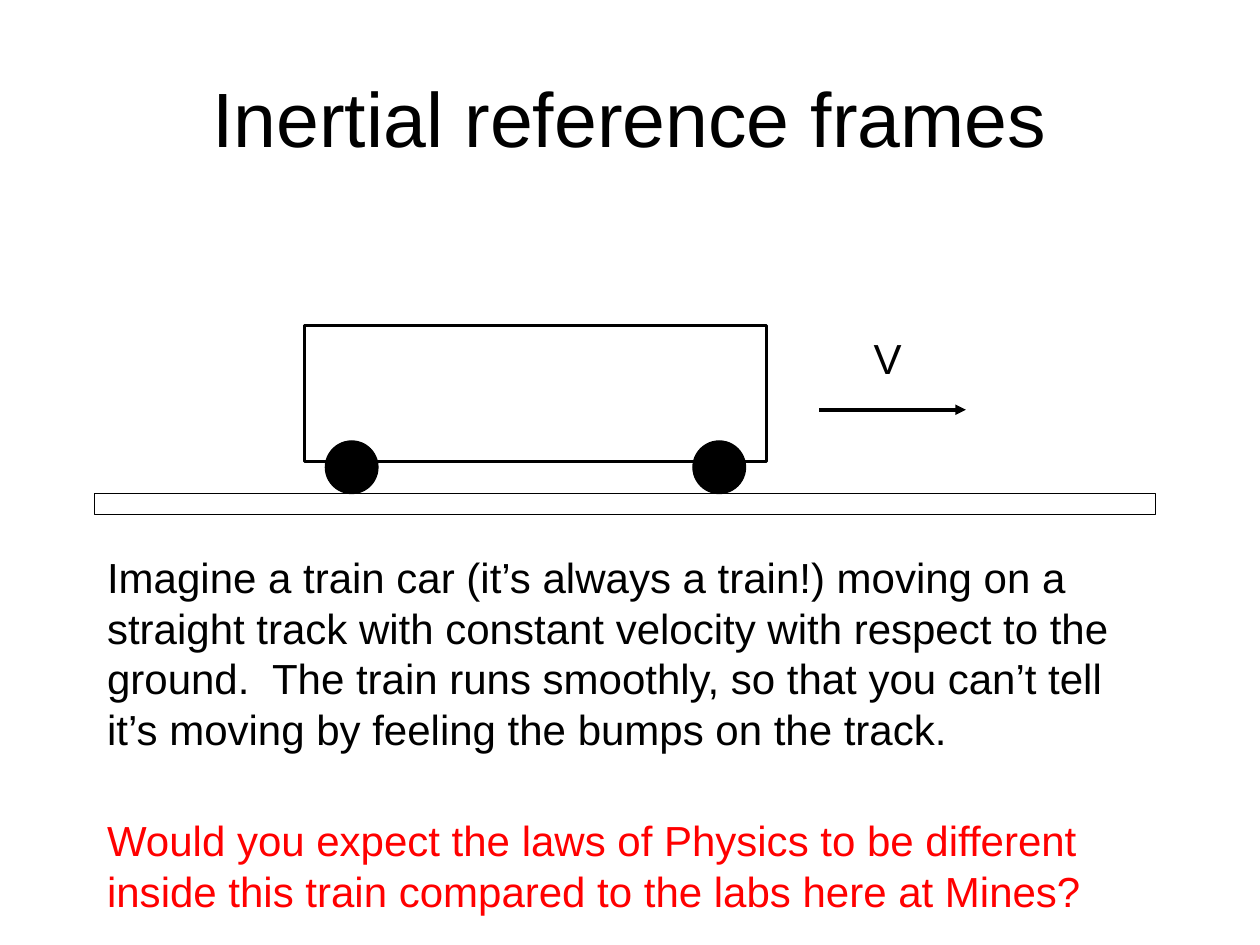
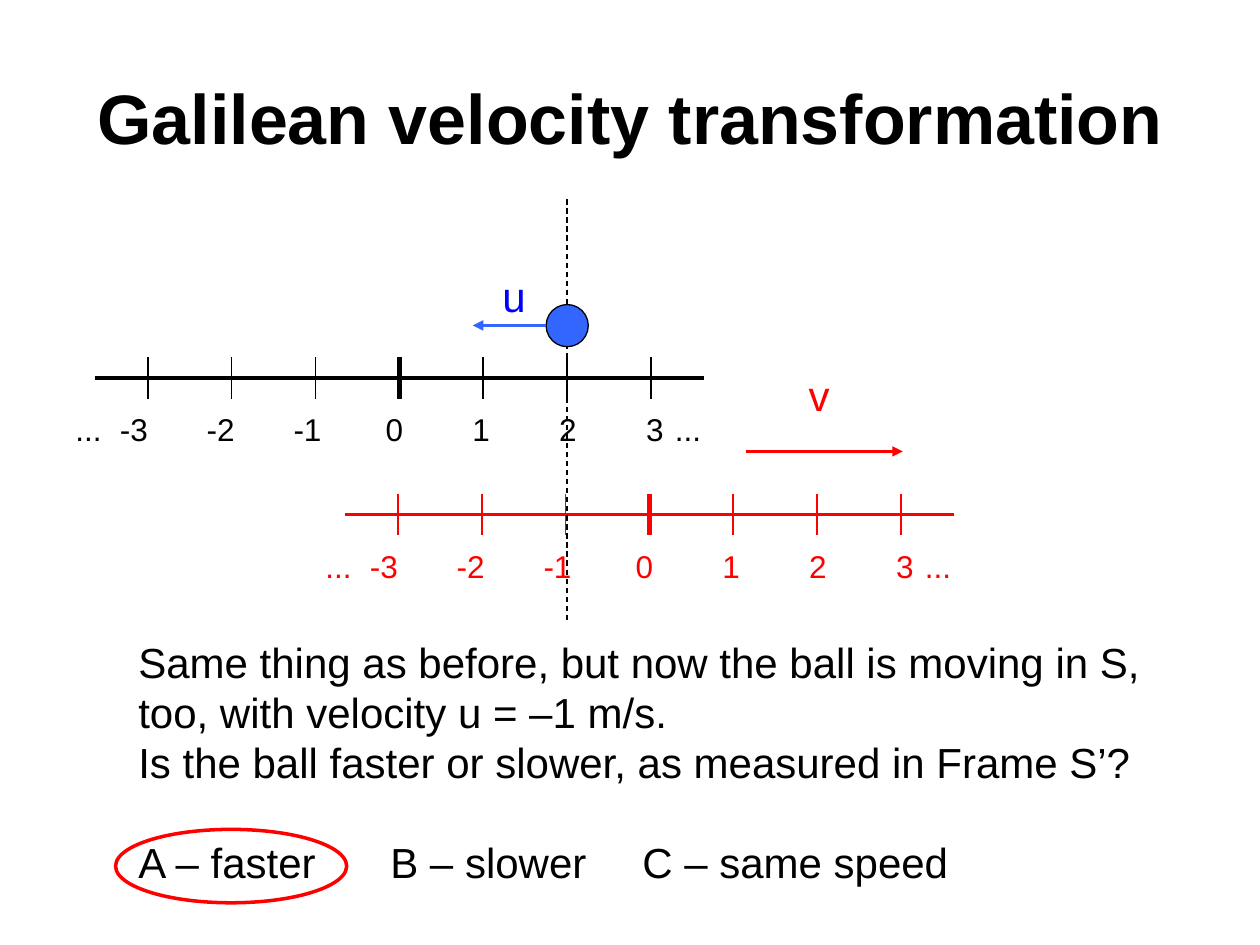
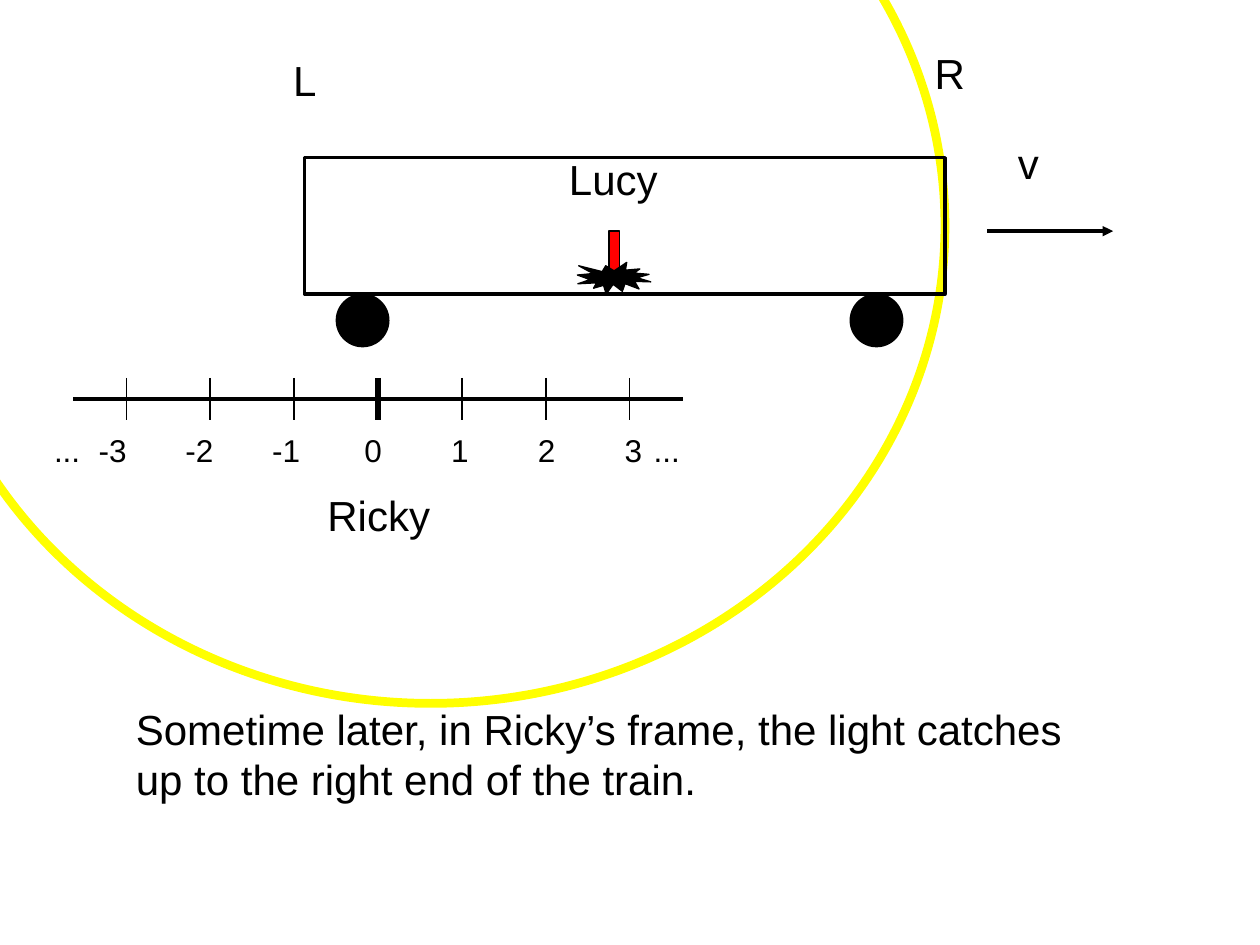
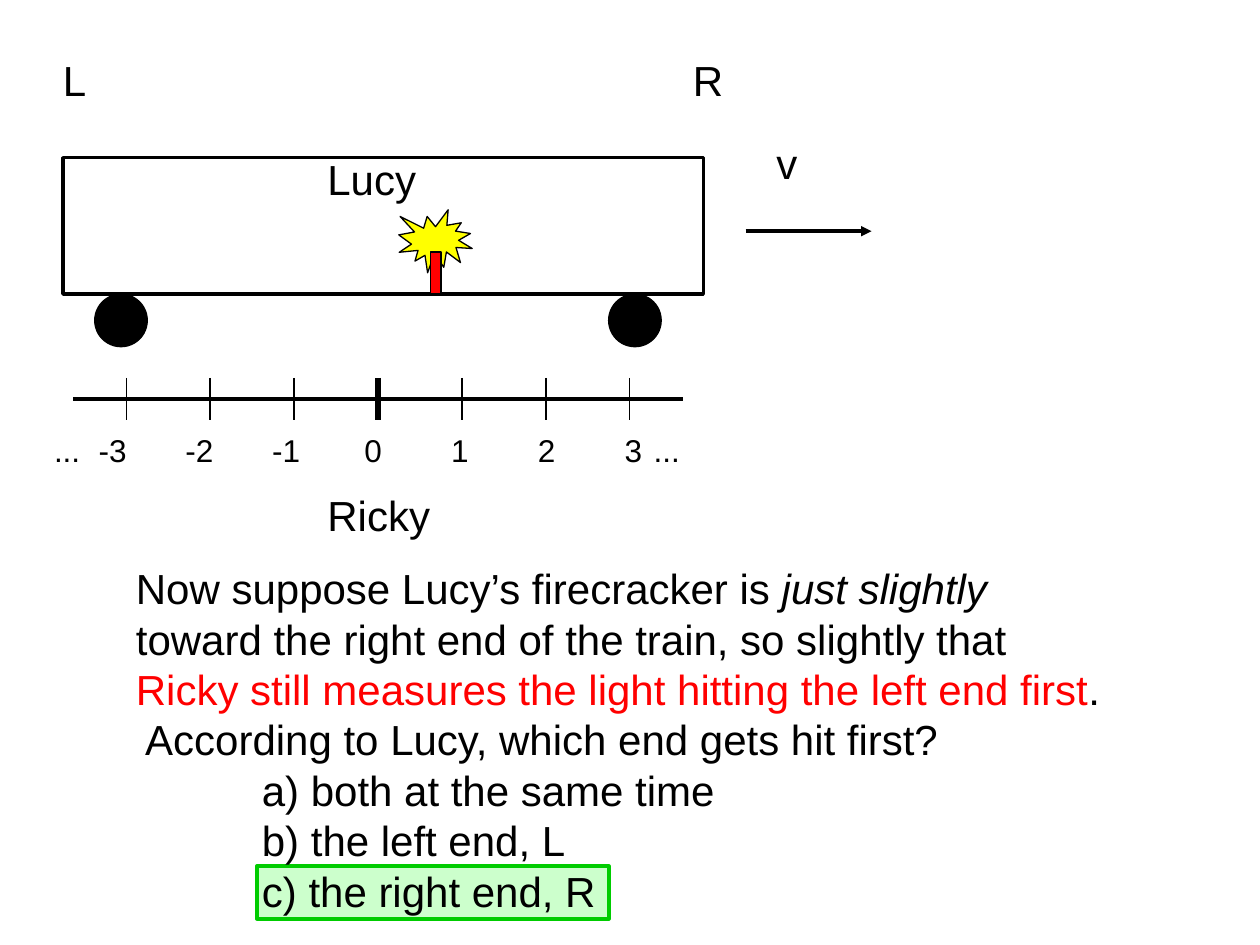
from dataclasses import dataclass
from typing import Optional

from lxml import etree
from pptx import Presentation
from pptx.dml.color import RGBColor
from pptx.enum.dml import MSO_LINE
from pptx.enum.shapes import MSO_CONNECTOR, MSO_SHAPE
from pptx.enum.text import MSO_ANCHOR, MSO_AUTO_SIZE, PP_ALIGN
from pptx.oxml.ns import qn
from pptx.util import Cm, Pt

RECTANGLE = MSO_SHAPE.RECTANGLE
OVAL = MSO_SHAPE.OVAL
BURST = MSO_SHAPE.EXPLOSION1
STRAIGHT = MSO_CONNECTOR.STRAIGHT
DASH = MSO_LINE.DASH
MIDDLE = MSO_ANCHOR.MIDDLE
CENTER = PP_ALIGN.CENTER
FIT_SHAPE = MSO_AUTO_SIZE.SHAPE_TO_FIT_TEXT


@dataclass(frozen=True)
class Theme:
    font: str = "Arial"
    black: str = "000000"
    red: str = "FF0000"
    yellow: str = "FFFF00"
    ball: str = "3366FF"
    ball_label: str = "0000FF"
    answer_fill: str = "CCFFCC"
    answer_line: str = "00CC00"
    title: int = 44
    bold_title: int = 40
    body: int = 24
    scale: int = 18
    hairline: float = 0.75
    tick: float = 1
    stroke: float = 2
    answer_stroke: float = 2.25
    origin: float = 3
    light: float = 5


THEME = Theme()


@dataclass(frozen=True)
class Frame:
    """A place on the page, in centimetres."""
    left: float
    top: float
    width: float
    height: float

    def lengths(self) -> tuple:
        return Cm(self.left), Cm(self.top), Cm(self.width), Cm(self.height)


@dataclass(frozen=True)
class Span:
    text: str
    color: Optional[str] = None
    italic: bool = False


@dataclass(frozen=True)
class Line:
    """One paragraph; indent and tabs are in centimetres, space before in points."""
    spans: tuple
    indent: float = 0
    before: float = 0
    tabs: tuple = ()
    tab_align: str = "l"


@dataclass(frozen=True)
class Ruler:
    left: float
    axis: float
    color: str = THEME.black


@dataclass(frozen=True)
class Train:
    body: Frame
    wheel_offsets: tuple
    wheel_top: float


def plain(text: str) -> Line:
    return Line((Span(text),))


def add_tabs(para, stops: tuple, align: str) -> None:
    tab_list = etree.SubElement(para._p.get_or_add_pPr(), qn("a:tabLst"))
    for stop in stops:
        etree.SubElement(tab_list, qn("a:tab"), pos=str(Cm(stop)), algn=align)


def add_text(page, frame: Frame, lines: list, size: int = THEME.body,
             color: str = THEME.black, wrap: bool = True):
    box = page.shapes.add_textbox(*frame.lengths())
    text_frame = box.text_frame
    text_frame.word_wrap = wrap
    text_frame.auto_size = FIT_SHAPE
    for index, line in enumerate(lines):
        para = text_frame.paragraphs[0] if index == 0 else text_frame.add_paragraph()
        if line.before:
            para.space_before = Pt(line.before)
        if line.indent:
            para._p.get_or_add_pPr().set("marL", str(Cm(line.indent)))
        if line.tabs:
            add_tabs(para, line.tabs, line.tab_align)
        for span in line.spans:
            para.add_run().text = span.text
        for font in (para.font, *(run.font for run in para.runs)):
            font.name, font.size = THEME.font, Pt(size)
            font.color.rgb = RGBColor.from_string(color)
        for run, span in zip(para.runs, line.spans):
            if span.italic:
                run.font.italic = True
            if span.color:
                run.font.color.rgb = RGBColor.from_string(span.color)
    return box


def add_label(page, text: str, left: float, top: float, width: float = 1,
              color: str = THEME.black) -> None:
    add_text(page, Frame(left, top, width, 1.27), [plain(text)], color=color, wrap=False)


def add_title(page, text: str, size: int, bold: bool = False) -> None:
    box = add_text(page, Frame(1.27, 0.76, 22.86, 3.18), [plain(text)], size)
    box.text_frame.auto_size = MSO_AUTO_SIZE.NONE
    box.text_frame.vertical_anchor = MIDDLE
    para = box.text_frame.paragraphs[0]
    para.alignment = CENTER
    para.font.bold = para.runs[0].font.bold = bold


def add_figure(page, kind, frame: Frame, fill: Optional[str] = None,
               line: str = THEME.black, weight: float = THEME.hairline) -> None:
    figure = page.shapes.add_shape(kind, *frame.lengths())
    figure.shadow.inherit = False
    if fill:
        figure.fill.solid()
        figure.fill.fore_color.rgb = RGBColor.from_string(fill)
    else:
        figure.fill.background()
    figure.line.color.rgb = RGBColor.from_string(line)
    figure.line.width = Pt(weight)


def add_line(page, start: tuple, end: tuple, color: str = THEME.black,
             weight: float = THEME.stroke, dashed: bool = False,
             arrow: bool = False) -> None:
    line = page.shapes.add_connector(STRAIGHT, *map(Cm, start + end))
    line.line.color.rgb = RGBColor.from_string(color)
    line.line.width = Pt(weight)
    if dashed:
        line.line.dash_style = DASH
    if arrow:
        etree.SubElement(line.line._get_or_add_ln(), qn("a:tailEnd"), type="triangle")
    etree.SubElement(line._element.spPr, qn("a:effectLst"))


def add_ruler(page, ruler: Ruler) -> None:
    """Draw an axis with ticks and numbers from -3 to 3."""
    length, step, half_tick = 12.28, 1.69, 0.42
    middle = ruler.left + length / 2
    add_line(page, (ruler.left, ruler.axis), (ruler.left + length, ruler.axis), ruler.color)
    numbers = range(-3, 4)
    for number in numbers:
        x = middle + number * step
        add_line(page, (x, ruler.axis - half_tick), (x, ruler.axis + half_tick),
                 ruler.color, THEME.tick if number else THEME.origin)
    stops = tuple(6.43 + number * 1.75 for number in numbers) + (12.35,)
    text = "\t".join(["...", *map(str, numbers), "..."])
    box = add_text(page, Frame(ruler.left - 0.64, ruler.axis + 0.53, 13.13, 1.02),
                   [Line((Span(text),), tabs=stops, tab_align="ctr")],
                   THEME.scale, ruler.color)
    box.text_frame.margin_right = 0


def add_train(page, train: Train) -> None:
    for offset in train.wheel_offsets:
        add_figure(page, OVAL, Frame(train.body.left + offset, train.wheel_top, 1.06, 1.06),
                   THEME.black)
    add_figure(page, RECTANGLE, train.body, weight=THEME.stroke)


def add_lucys_train(page, left: float) -> None:
    """Draw the long train with its velocity arrow."""
    add_train(page, Train(Frame(left, 3.18, 12.91, 2.75), (0.64, 11), 5.93))
    arrow_left = left + 13.76
    add_line(page, (arrow_left, 4.66), (arrow_left + 2.54, 4.66), arrow=True)
    add_label(page, "v", left + 14.13, 2.65)


def add_ricky(page) -> None:
    add_ruler(page, Ruler(1.48, 8.04))
    add_label(page, "Ricky", 6.35, 9.74, 2.59)


def build_inertial_frames(page) -> None:
    add_title(page, "Inertial reference frames", THEME.title)
    add_text(page, Frame(1.91, 11, 20.96, 4.37), [plain(
        "Imagine a train car (it’s always a train!) moving on a straight track with "
        "constant velocity with respect to the ground.  The train runs smoothly, so that "
        "you can’t tell it’s moving by feeling the bumps on the track.")])
    add_figure(page, RECTANGLE, Frame(1.91, 9.95, 21.38, 0.42))
    add_train(page, Train(Frame(6.14, 6.56, 9.31, 2.75), (0.42, 7.83), 8.89))
    add_line(page, (16.51, 8.26), (19.47, 8.26), arrow=True)
    add_label(page, "V", 17.36, 6.58)
    add_text(page, Frame(1.91, 16.3, 22.44, 2.31), [plain(
        "Would you expect the laws of Physics to be different inside this train compared "
        "to the labs here at Mines?")], color=THEME.red)


def build_velocity_transformation(page) -> None:
    add_title(page, "Galilean velocity transformation", THEME.bold_title, bold=True)
    add_ruler(page, Ruler(1.91, 7.62))
    add_ruler(page, Ruler(6.95, 10.37, THEME.red))
    add_line(page, (11.43, 4.02), (11.43, 12.5), weight=THEME.hairline, dashed=True)
    add_figure(page, OVAL, Frame(11.01, 6.14, 0.85, 0.85), THEME.ball)
    add_line(page, (11.01, 6.56), (9.53, 6.56), THEME.ball, arrow=True)
    add_label(page, "u", 9.88, 5.33, color=THEME.ball_label)
    add_line(page, (15.03, 9.1), (18.2, 9.1), THEME.red, arrow=True)
    add_label(page, "v", 16.05, 7.32, color=THEME.red)
    add_text(page, Frame(2.54, 12.7, 20.78, 5.38), [
        plain("Same thing as before, but now the ball is moving in S, too, "
              "with velocity u = –1 m/s."),
        plain("Is the ball faster or slower, as measured in Frame S’?"),
        Line((Span("A – faster\tB – slower\tC – same speed"),),
             before=28, tabs=(5.08, 10.16)),
    ])
    add_figure(page, OVAL, Frame(2.33, 16.72, 4.66, 1.48), line=THEME.red,
               weight=THEME.stroke)


def build_light_reaches_right(page) -> None:
    add_text(page, Frame(2.49, 14.05, 20.14, 2.31), [plain(
        "Sometime later, in Ricky’s frame, the light catches up to the right end "
        "of the train.")])
    add_figure(page, OVAL, Frame(-1.69, -5.08, 20.74, 19.26), line=THEME.yellow,
               weight=THEME.light)
    add_lucys_train(page, 6.14)
    add_label(page, "Lucy", 11.22, 2.96, 2.31)
    add_figure(page, RECTANGLE, Frame(12.28, 4.66, 0.21, 1.06), THEME.red)
    add_figure(page, BURST, Frame(11.64, 5.29, 1.48, 0.64), THEME.black)
    add_label(page, "L", 5.66, 0.97)
    add_label(page, "R", 18.59, 0.84, 1.12)
    add_ricky(page)


def build_which_end_first(page) -> None:
    add_figure(page, RECTANGLE, Frame(5.18, 17.46, 7.09, 1.06), THEME.answer_fill,
               THEME.answer_line, THEME.answer_stroke)
    add_lucys_train(page, 1.27)
    add_ricky(page)
    add_figure(page, BURST, Frame(8.04, 4.23, 1.48, 1.27), THEME.yellow)
    add_figure(page, RECTANGLE, Frame(8.68, 5.08, 0.21, 0.85), THEME.red)
    add_label(page, "Lucy", 6.35, 2.96, 2.31)
    question = Line((
        Span("Now suppose Lucy’s firecracker is "),
        Span("just slightly", italic=True),
        Span(" toward the right end of the train, so slightly that "),
        Span("Ricky still measures the light hitting the left end first", THEME.red),
        Span(".  According to Lucy, which end gets hit first?"),
    ))
    answers = ("a) both at the same time", "b) the left end, L", "c) the right end, R")
    add_text(page, Frame(2.49, 11.22, 20.14, 7.45),
             [question, *(Line((Span(answer),), indent=2.54) for answer in answers)])
    add_label(page, "L", 1.02, 0.97)
    add_label(page, "R", 13.72, 0.97, 1.12)


def main() -> None:
    deck = Presentation()
    deck.slide_width, deck.slide_height = Cm(25.4), Cm(19.05)
    blank = deck.slide_layouts[6]
    for build in (build_inertial_frames, build_velocity_transformation,
                  build_light_reaches_right, build_which_end_first):
        build(deck.slides.add_slide(blank))
    deck.save("out.pptx")


if __name__ == "__main__":
    main()
